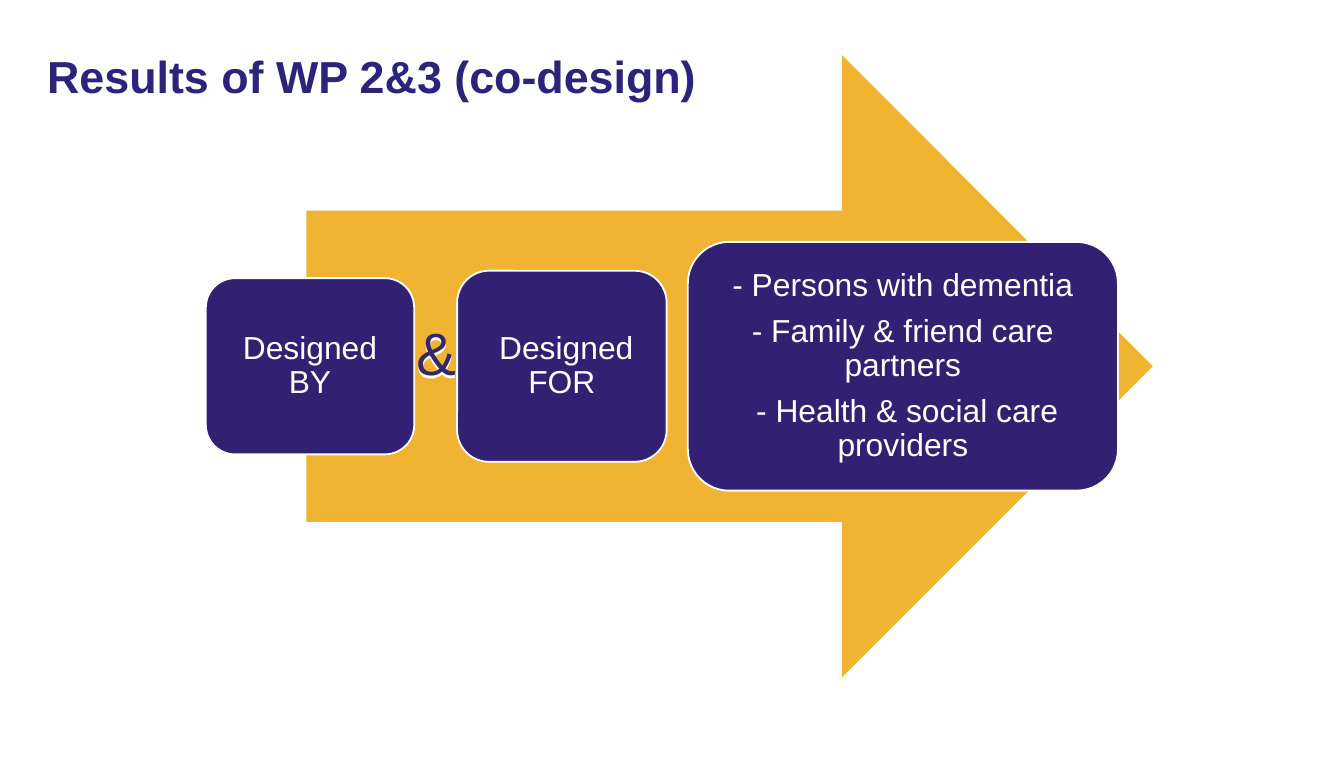
import pptx
import pptx.util
import pptx.dml.color
import pptx.enum.shapes
import pptx.enum.text

Cm = pptx.util.Cm
Pt = pptx.util.Pt
SHAPES = pptx.enum.shapes.MSO_SHAPE
ALIGN = pptx.enum.text.PP_ALIGN
ANCHOR = pptx.enum.text.MSO_ANCHOR

COLOURS = {
    "title": "2C247C",
    "arrow": "F0B332",
    "box": "322172",
    "ampersand": "34286B",
    "white": "FFFFFF",
}
MIDLINE = 6.92  # the arrow and all boxes are centred on this height, in cm

# left, width, height in cm, then the lines of text
BOXES = [
    (3.89, 3.94, 3.33, ["Designed BY"]),
    (8.64, 3.96, 3.61, [" Designed FOR"]),
    (13, 8.13, 4.7, [
        "- Persons with dementia",
        "- Family & friend care partners",
        " - Health & social care providers",
    ]),
]


def colour(name):
    return pptx.dml.color.RGBColor.from_string(COLOURS[name])


def set_font(paragraph, size, colour_name, bold=False):
    font = paragraph.font
    font.name = "Arial"
    font.size = Pt(size)
    font.bold = bold
    font.color.rgb = colour(colour_name)


def set_insets(frame, inset):
    frame.margin_left = frame.margin_right = Cm(inset)
    frame.margin_top = frame.margin_bottom = Cm(inset)


def add_title(slide, text):
    title = slide.shapes.title
    title.left, title.top = Cm(0.89), Cm(1.04)
    title.width, title.height = Cm(19.3), Cm(0.91)
    frame = title.text_frame
    frame.text = text
    frame.word_wrap = True
    frame.vertical_anchor = ANCHOR.TOP
    set_insets(frame, 0)
    heading = frame.paragraphs[0]
    heading.alignment = ALIGN.LEFT
    heading.line_spacing = 0.9
    set_font(heading, 24, "title", bold=True)


def add_centred_shape(slide, preset, left, width, height, fill):
    """Add a filled shape whose vertical centre lies on the midline."""
    shape = slide.shapes.add_shape(
        preset, Cm(left), Cm(MIDLINE - height / 2), Cm(width), Cm(height))
    shape.shadow.inherit = False
    shape.fill.solid()
    shape.fill.fore_color.rgb = colour(fill)
    shape.line.fill.background()
    return shape


def add_box(slide, left, width, height, lines):
    box = add_centred_shape(
        slide, SHAPES.ROUNDED_RECTANGLE, left, width, height, "box")
    box.line.color.rgb = colour("white")
    box.line.width = Pt(1)
    frame = box.text_frame
    frame.text = "\n".join(lines)
    frame.word_wrap = True
    frame.vertical_anchor = ANCHOR.MIDDLE
    set_insets(frame, 0.18)
    for paragraph in frame.paragraphs:
        paragraph.alignment = ALIGN.CENTER
        paragraph.line_spacing = 0.9
        paragraph.space_after = Pt(6)
        set_font(paragraph, 17, "white")


def add_ampersand(slide, top, colour_name):
    box = slide.shapes.add_textbox(Cm(7.62), Cm(top), Cm(1.07), Cm(1.63))
    frame = box.text_frame
    frame.word_wrap = True
    frame.text = "&"
    set_font(frame.paragraphs[0], 32, colour_name)


def main():
    deck = pptx.Presentation()
    deck.slide_width, deck.slide_height = Cm(25.4), Cm(14.3)
    slide = deck.slides.add_slide(deck.slide_layouts[5])

    add_title(slide, "Results of WP 2&3 (co-design)")
    add_centred_shape(slide, SHAPES.RIGHT_ARROW, 5.79, 16, 11.76, "arrow")
    for box in BOXES:
        add_box(slide, *box)
    # a white ampersand just below the dark one gives it a light edge
    add_ampersand(slide, 5.89, "white")
    add_ampersand(slide, 5.84, "ampersand")

    deck.save("out.pptx")


if __name__ == "__main__":
    main()
